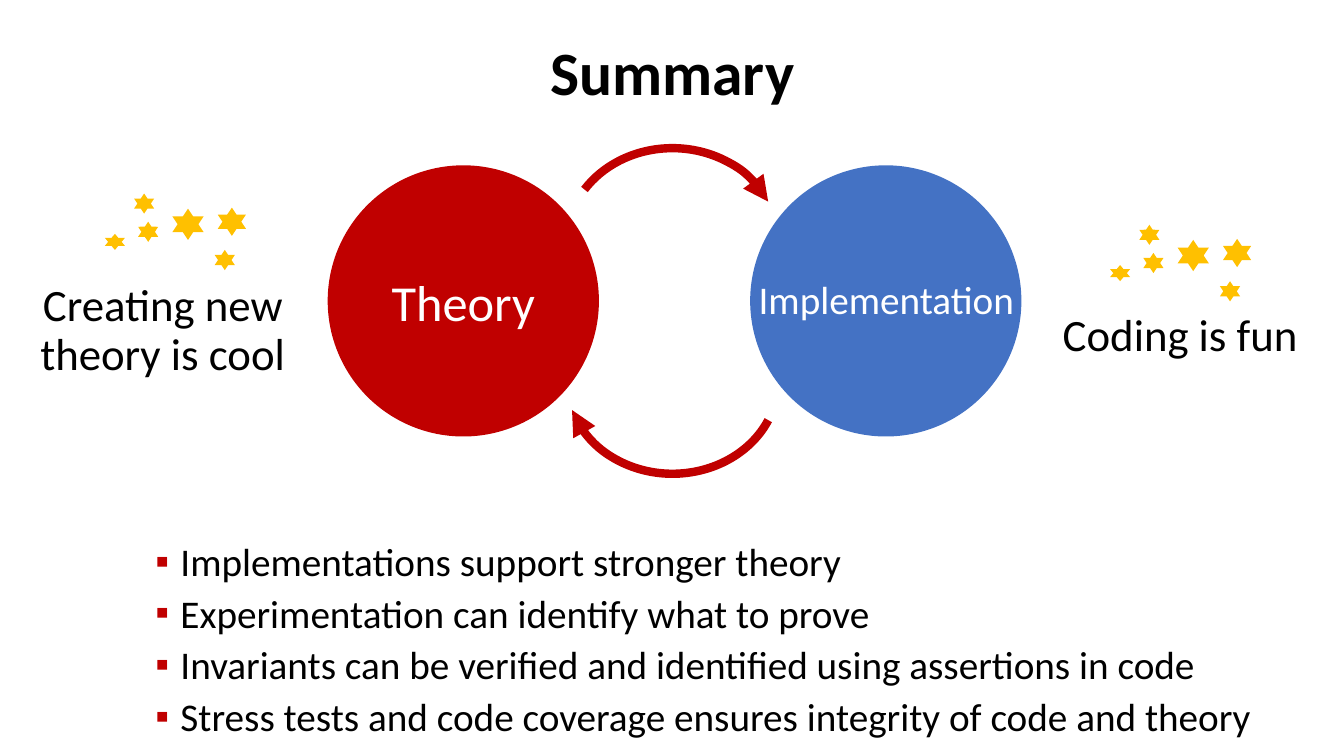
"""Build the Summary slide: a theory and implementation cycle above four takeaways."""
from lxml.etree import SubElement
from pptx import Presentation
from pptx.dml.color import RGBColor
from pptx.enum.shapes import MSO_SHAPE
from pptx.enum.text import MSO_ANCHOR, MSO_AUTO_SIZE, PP_ALIGN
from pptx.oxml.ns import qn
from pptx.util import Inches, Pt

COLORS = {"red": "C00000", "blue": "4472C4", "gold": "FFC000", "black": "000000", "white": "FFFFFF"}
FONT = "Calibri"

TITLE = "Summary"
TAKEAWAYS = [
    "Implementations support stronger theory",
    "Experimentation can identify what to prove",
    "Invariants can be verified and identified using assertions in code",
    "Stress tests and code coverage ensures integrity of code and theory",
]
ARROWS = [
    (1.47, "flipH", (121.546, 197.67)),
    (2.85, "flipV", (117.844, 202.51)),
]
CIRCLES = [(3.25, "red", "Theory"), (7.44, "blue", "")]
LABELS = [
    ("Implementation", (7.34, 2.68, 2.9, 0.57), 28, "white", PP_ALIGN.CENTER, 1, 0),
    ("Creating new theory is cool", (0.17, 2.76, 2.89, 1.17), 32, "black", PP_ALIGN.CENTER, 0.9, 10),
    ("Coding is fun", (9.89, 3.05, 3.08, 0.69), 32, "black", PP_ALIGN.RIGHT, 0.9, 10),
]
STAR_CLUSTERS = [(1.04, 1.92), (11.01, 2.23)]
STARS = [
    (0.33, 0.28, 0.2, 0.2),
    (0.29, 0, 0.2, 0.2),
    (0, 0.4, 0.2, 0.16),
    (0.67, 0.15, 0.31, 0.31),
    (1.09, 0.56, 0.2, 0.2),
    (1.12, 0.14, 0.28, 0.28),
]


def color(name):
    return RGBColor.from_string(COLORS[name])


def inches(box):
    return [Inches(length) for length in box]


def place(shape, box):
    shape.left, shape.top, shape.width, shape.height = inches(box)


def write(paragraph, text, size, color_name, align, line_spacing=1, space_before=0, bold=False):
    paragraph.alignment = align
    paragraph.line_spacing = line_spacing
    paragraph.space_before = Pt(space_before)
    run = paragraph.add_run()
    run.text = text
    run.font.name = FONT
    run.font.size = Pt(size)
    run.font.bold = bold
    run.font.color.rgb = color(color_name)


def add_filled(shapes, kind, box, color_name):
    shape = shapes.add_shape(kind, *inches(box))
    shape.shadow.inherit = False
    shape.fill.solid()
    shape.fill.fore_color.rgb = color(color_name)
    shape.line.fill.background()
    return shape


def add_bullet(paragraph):
    properties = paragraph._p.get_or_add_pPr()
    properties.set("marL", str(Inches(0.25)))
    properties.set("indent", str(-Inches(0.25)))
    bullet_color = SubElement(properties, qn("a:buClr"))
    SubElement(bullet_color, qn("a:srgbClr"), val=COLORS["red"])
    SubElement(properties, qn("a:buFont"), typeface="Arial")
    SubElement(properties, qn("a:buChar"), char="▪")


def add_arrow(slide, top, flip, angles):
    arc = slide.shapes.add_shape(MSO_SHAPE.ARC, *inches((5.62, top, 2.1, 1.85)))
    arc.shadow.inherit = False
    arc.adjustments[0], arc.adjustments[1] = angles
    arc.fill.background()
    arc.line.color.rgb = color("red")
    arc.line.width = Pt(6)
    arc._element.spPr.xfrm.set(flip, "1")
    SubElement(arc.line._get_or_add_ln(), qn("a:headEnd"), type="triangle")


def main():
    presentation = Presentation()
    presentation.slide_width, presentation.slide_height = Inches(13.33), Inches(7.5)
    slide = presentation.slides.add_slide(presentation.slide_layouts[1])

    title, body = slide.placeholders
    place(title, (0.92, 0.02, 11.5, 1.45))
    title.text_frame.vertical_anchor = MSO_ANCHOR.MIDDLE
    write(title.text_frame.paragraphs[0], TITLE, 44, "black", PP_ALIGN.CENTER, 0.9, bold=True)

    place(body, (1.44, 5.37, 11.18, 2.04))
    frame = body.text_frame
    frame.auto_size = MSO_AUTO_SIZE.NONE
    for index, takeaway in enumerate(TAKEAWAYS):
        paragraph = frame.add_paragraph() if index else frame.paragraphs[0]
        write(paragraph, takeaway, 28, "black", PP_ALIGN.LEFT, 0.8, 10)
        add_bullet(paragraph)

    for top, flip, angles in ARROWS:
        add_arrow(slide, top, flip, angles)

    for left, fill, text in CIRCLES:
        circle = add_filled(slide.shapes, MSO_SHAPE.OVAL, (left, 1.64, 2.69, 2.69), fill)
        if text:
            circle.text_frame.vertical_anchor = MSO_ANCHOR.MIDDLE
            write(circle.text_frame.paragraphs[0], text, 36, "white", PP_ALIGN.CENTER)

    for text, box, size, color_name, align, line_spacing, space_before in LABELS:
        label = slide.shapes.add_textbox(*inches(box))
        label.text_frame.word_wrap = True
        write(label.text_frame.paragraphs[0], text, size, color_name, align, line_spacing, space_before)

    for cluster_left, cluster_top in STAR_CLUSTERS:
        cluster = slide.shapes.add_group_shape()
        for left, top, width, height in STARS:
            box = (cluster_left + left, cluster_top + top, width, height)
            add_filled(cluster.shapes, MSO_SHAPE.STAR_6_POINT, box, "gold")

    presentation.save("out.pptx")


if __name__ == "__main__":
    main()
